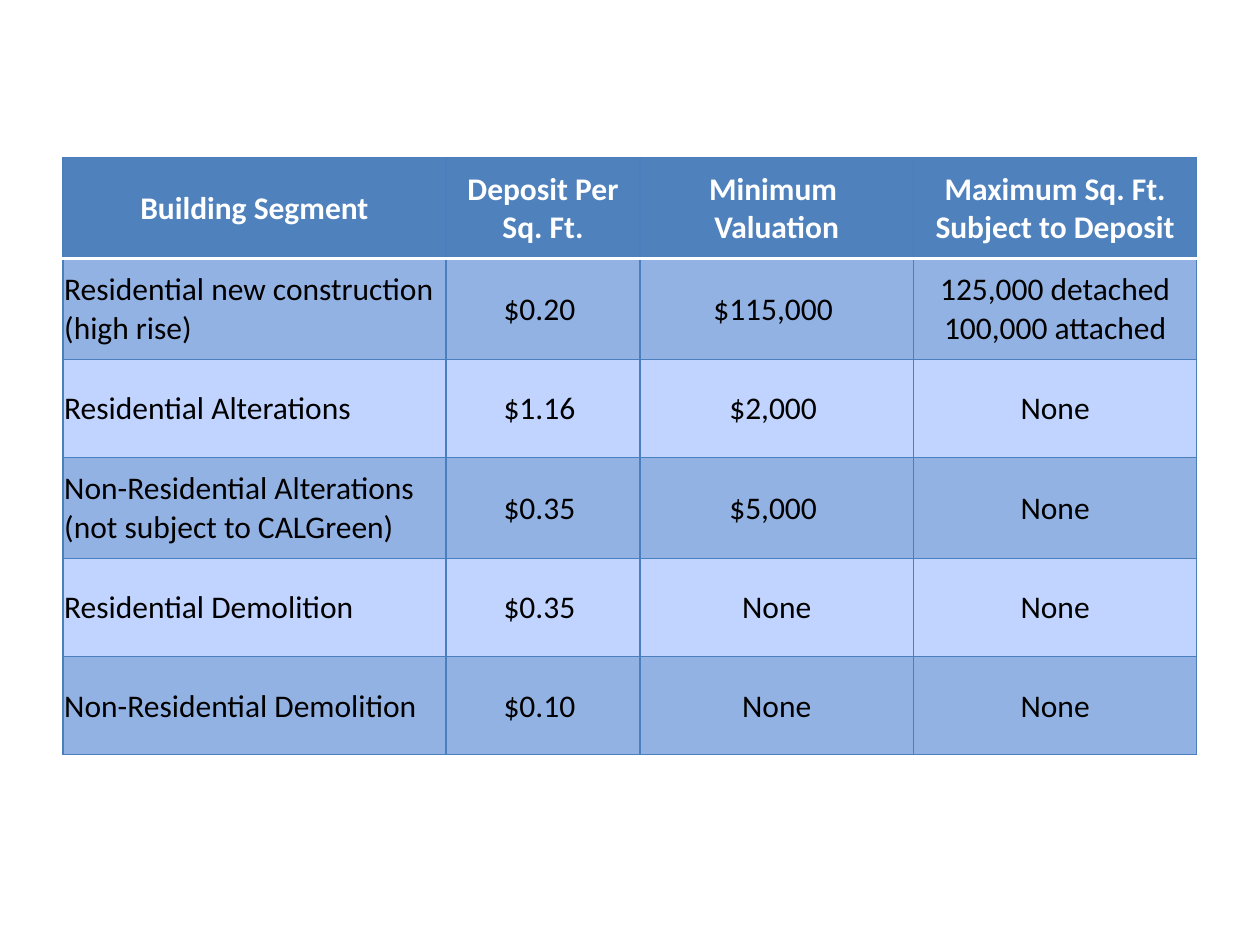
"""Build a slide with a table of deposit rates by building segment."""
import pptx
import pptx.dml.color
import pptx.enum.text
import pptx.oxml
import pptx.oxml.ns
import pptx.util

Pt = pptx.util.Pt
RGB = pptx.dml.color.RGBColor.from_string
ALIGN = pptx.enum.text.PP_ALIGN

THEME = {
    "font": "Calibri", "size": 18,
    "header": "4F81BD", "header_text": "FFFFFF",
    "band": "93B2E4", "plain": "C0D4FF", "text": "000000",
    "grid": ("4B7EBC", 0.75), "rule": ("FFFFFF", 2),
}
COLS = [218.88, 110.88, 156.24, 162]
ROWS = [57.6, 57.6, 56.16, 57.6, 56.16, 56.16]
DATA = [
    ["Building Segment", "Deposit Per Sq. Ft.", "Minimum \nValuation",
     "Maximum Sq. Ft. Subject to Deposit"],
    ["Residential new construction (high rise)", "$0.20 ", "$115,000 ",
     "125,000 detached\v100,000 attached"],
    ["Residential Alterations", "$1.16 ", "$2,000 ", "None"],
    ["Non-Residential Alterations (not subject to CALGreen)", "$0.35 ", "$5,000 ", "None"],
    ["Residential Demolition", "$0.35 ", "None", "None"],
    ["Non-Residential Demolition", "$0.10 ", "None", "None"],
]
CELL = {
    "margin_left": Pt(0.72), "margin_right": Pt(0.72),
    "margin_top": Pt(0.72), "margin_bottom": Pt(0),
    "vertical_anchor": pptx.enum.text.MSO_ANCHOR.MIDDLE,
}


def add_border(cell, side, color, width):
    """Draw one solid edge of a cell."""
    cell._tc.get_or_add_tcPr().append(pptx.oxml.parse_xml(
        f'<a:ln{side} {pptx.oxml.ns.nsdecls("a")} w="{Pt(width)}">'
        f'<a:solidFill><a:srgbClr val="{color}"/></a:solidFill></a:ln{side}>'))


prs = pptx.Presentation()
prs.slide_width, prs.slide_height = Pt(720), Pt(540)
s = prs.slides.add_slide(prs.slide_layouts[6])
table = s.shapes.add_table(len(ROWS), len(COLS), Pt(36), Pt(90),
                           Pt(sum(COLS)), Pt(sum(ROWS))).table
for column, width in zip(table.columns, COLS):
    column.width = Pt(width)
for row, height in zip(table.rows, ROWS):
    row.height = Pt(height)

for i, texts in enumerate(DATA):
    header = i == 0
    fill = THEME["header" if header else "band" if i % 2 else "plain"]
    font = {"name": THEME["font"], "size": Pt(THEME["size"]), "bold": header}
    color = THEME["header_text" if header else "text"]
    edges = {"L": "grid", "R": "grid",
             "T": "rule" if i == 1 else "grid", "B": "rule" if header else "grid"}
    for j, text in enumerate(texts):
        cell = table.cell(i, j)
        for name, value in CELL.items():
            setattr(cell, name, value)
        for side, line in edges.items():
            add_border(cell, side, *THEME[line])
        cell.fill.solid()
        cell.fill.fore_color.rgb = RGB(fill)
        tf = cell.text_frame
        tf.text = text
        for p in tf.paragraphs:
            p.alignment = ALIGN.CENTER if header or j else ALIGN.LEFT
            for r in p.runs:
                for name, value in font.items():
                    setattr(r.font, name, value)
                r.font.color.rgb = RGB(color)

prs.save("out.pptx")
